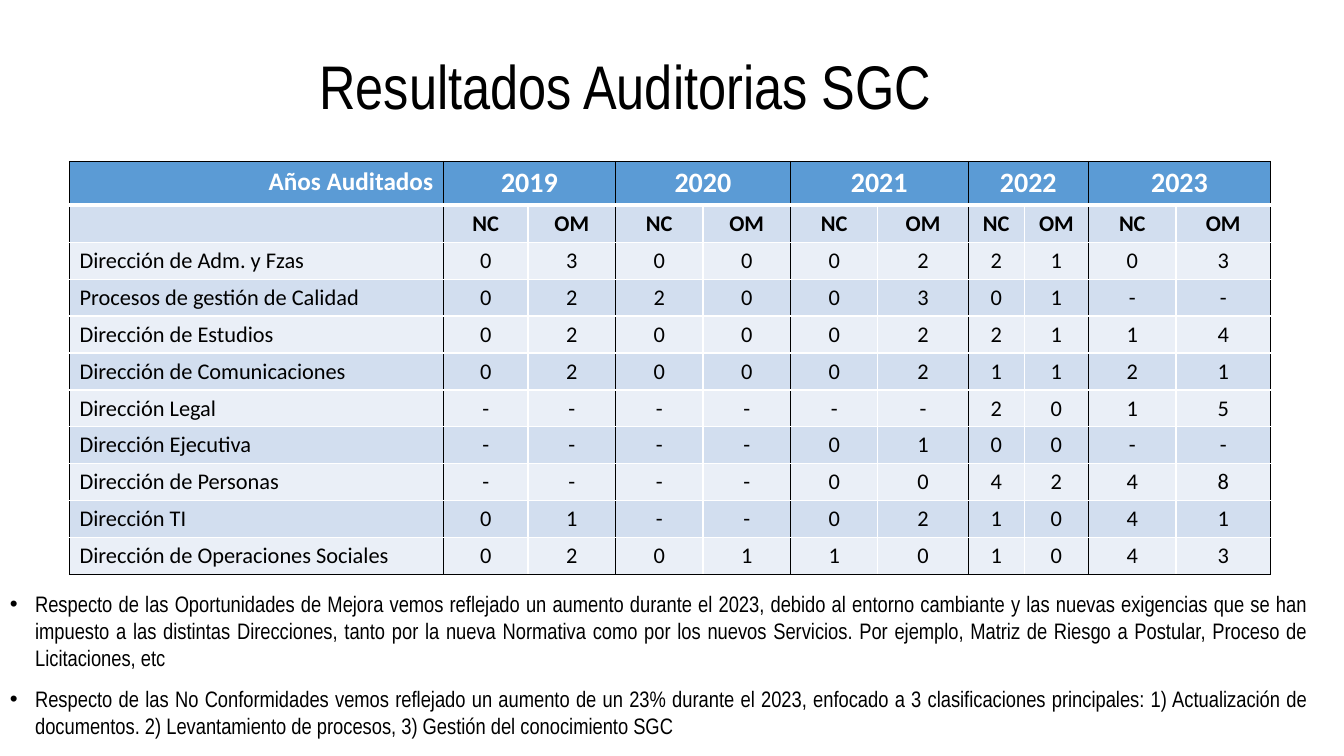
import pptx
import pptx.dml.color
import pptx.enum.text
import pptx.oxml
import pptx.oxml.ns
import pptx.util
from lxml import etree

Pt = pptx.util.Pt
RGBColor = pptx.dml.color.RGBColor
ALIGN = pptx.enum.text.PP_ALIGN

BLACK = RGBColor(0x00, 0x00, 0x00)
WHITE = RGBColor(0xFF, 0xFF, 0xFF)
HEADER_BLUE = RGBColor(0x5B, 0x9B, 0xD5)
BAND_DARK = RGBColor(0xD2, 0xDE, 0xEF)
BAND_LIGHT = RGBColor(0xEA, 0xEF, 0xF7)

TITLE = "Resultados Auditorias SGC"
CORNER = "Años Auditados"
YEARS = ["2019", "2020", "2021", "2022", "2023"]
MEASURES = ["NC", "OM"]
RESULTS = [
    ("Dirección de Adm. y Fzas", "0 3 0 0 0 2 2 1 0 3"),
    ("Procesos de gestión de Calidad", "0 2 2 0 0 3 0 1 - -"),
    ("Dirección de Estudios", "0 2 0 0 0 2 2 1 1 4"),
    ("Dirección de Comunicaciones", "0 2 0 0 0 2 1 1 2 1"),
    ("Dirección Legal", "- - - - - - 2 0 1 5"),
    ("Dirección Ejecutiva", "- - - - 0 1 0 0 - -"),
    ("Dirección de Personas", "- - - - 0 0 4 2 4 8"),
    ("Dirección TI", "0 1 - - 0 2 1 0 4 1"),
    ("Dirección de Operaciones Sociales", "0 2 0 1 1 0 1 0 4 3"),
]
NOTES = [
    "Respecto de las Oportunidades de Mejora vemos reflejado un aumento durante el 2023, "
    "debido al entorno cambiante y las nuevas exigencias que se han impuesto a las distintas "
    "Direcciones, tanto por la nueva Normativa como por los nuevos Servicios. Por ejemplo, "
    "Matriz de Riesgo a Postular, Proceso de Licitaciones, etc",
    "Respecto de las No Conformidades vemos reflejado un aumento de un 23% durante el 2023, "
    "enfocado a 3 clasificaciones principales: 1) Actualización de documentos. "
    "2) Levantamiento de procesos, 3) Gestión del conocimiento SGC",
]

COLUMN_WIDTHS = [267, 60.5, 62.5, 62.5, 62.5, 62.5, 64.5, 40, 46, 62.5, 67.5]
HEADER_HEIGHT = 31.2
ROW_HEIGHT = 26.4


def write_text(paragraph, text, size=16, font="Calibri", color=BLACK, bold=False,
               align=ALIGN.LEFT, line_spacing=1.0, space_before=0, bullet=None):
    paragraph.alignment = align
    paragraph.line_spacing = line_spacing
    paragraph.space_before = Pt(space_before)
    if bullet:
        properties = paragraph._p.get_or_add_pPr()
        properties.set("marL", str(Pt(18)))
        properties.set("indent", str(-Pt(18)))
        etree.SubElement(properties, pptx.oxml.ns.qn("a:buFont")).set("typeface", "Arial")
        etree.SubElement(properties, pptx.oxml.ns.qn("a:buChar")).set("char", bullet)
    paragraph.font.size = Pt(size)
    if text:
        run = paragraph.add_run()
        run.text = text
        run.font.size = Pt(size)
        run.font.name = font
        run.font.bold = bold
        run.font.color.rgb = color


def add_text_box(slide, left, top, width, height):
    text_frame = slide.shapes.add_textbox(Pt(left), Pt(top), Pt(width), Pt(height)).text_frame
    text_frame.word_wrap = True
    return text_frame


def set_borders(cell, borders):
    properties = cell._tc.get_or_add_tcPr()
    for position, (side, (color, width)) in enumerate(borders.items()):
        properties.insert(position, pptx.oxml.parse_xml(
            f'<a:ln{side} {pptx.oxml.ns.nsdecls("a")} w="{Pt(width)}">'
            f'<a:solidFill><a:srgbClr val="{color}"/></a:solidFill></a:ln{side}>'))


def format_cell(cell, row, column, last_row):
    if row == 0:
        fill = HEADER_BLUE
    else:
        fill = BAND_DARK if row % 2 else BAND_LIGHT
    cell.fill.solid()
    cell.fill.fore_color.rgb = fill
    cell.margin_top = cell.margin_bottom = Pt(3.4)
    opens_year = column % 2 == 1
    header = row == 0
    set_borders(cell, {
        "L": (BLACK if header or opens_year or column == 0 else WHITE, 1),
        "R": (BLACK if header or not opens_year else WHITE, 1),
        "T": (BLACK if header else WHITE, 3 if row == 1 else 1),
        "B": (BLACK if row == last_row else WHITE, 3 if header else 1),
    })


def add_results_table(slide):
    year_cells = [text for year in YEARS for text in (year, "")]
    rows = [[CORNER] + year_cells, [""] + MEASURES * len(YEARS)]
    rows += [[name] + values.split() for name, values in RESULTS]
    heights = [HEADER_HEIGHT] + [ROW_HEIGHT] * (len(rows) - 1)
    table = slide.shapes.add_table(len(rows), len(COLUMN_WIDTHS), Pt(49.7), Pt(115.4),
                                   Pt(sum(COLUMN_WIDTHS)), Pt(sum(heights))).table
    table.first_row = False
    table.horz_banding = False
    for column, width in zip(table.columns, COLUMN_WIDTHS):
        column.width = Pt(width)
    for row, height in zip(table.rows, heights):
        row.height = Pt(height)
    for column in range(1, len(COLUMN_WIDTHS), 2):
        table.cell(0, column).merge(table.cell(0, column + 1))
    for row, texts in enumerate(rows):
        for column, text in enumerate(texts):
            cell = table.cell(row, column)
            format_cell(cell, row, column, len(rows) - 1)
            align = ALIGN.CENTER if column else ALIGN.RIGHT if row == 0 else ALIGN.LEFT
            size = 16 if row else 20 if column else 18
            write_text(cell.text_frame.paragraphs[0], text, size=size, align=align,
                       color=BLACK if row else WHITE, bold=row < 2)


def main():
    presentation = pptx.Presentation()
    presentation.slide_width = Pt(960)
    presentation.slide_height = Pt(540)
    slide = presentation.slides.add_slide(presentation.slide_layouts[6])

    title = add_text_box(slide, 221, 36.7, 610.5, 104.4)
    write_text(title.paragraphs[0], TITLE, size=44, font="Arial Narrow", line_spacing=0.9)

    add_results_table(slide)

    notes = add_text_box(slide, 0, 418.3, 941.8, 91.4)
    for index, note in enumerate(NOTES):
        paragraph = notes.add_paragraph() if index else notes.paragraphs[0]
        write_text(paragraph, note, font="Arial Narrow", align=ALIGN.JUSTIFY,
                   space_before=10 if index else 0, bullet="•")

    presentation.save("out.pptx")


if __name__ == "__main__":
    main()
